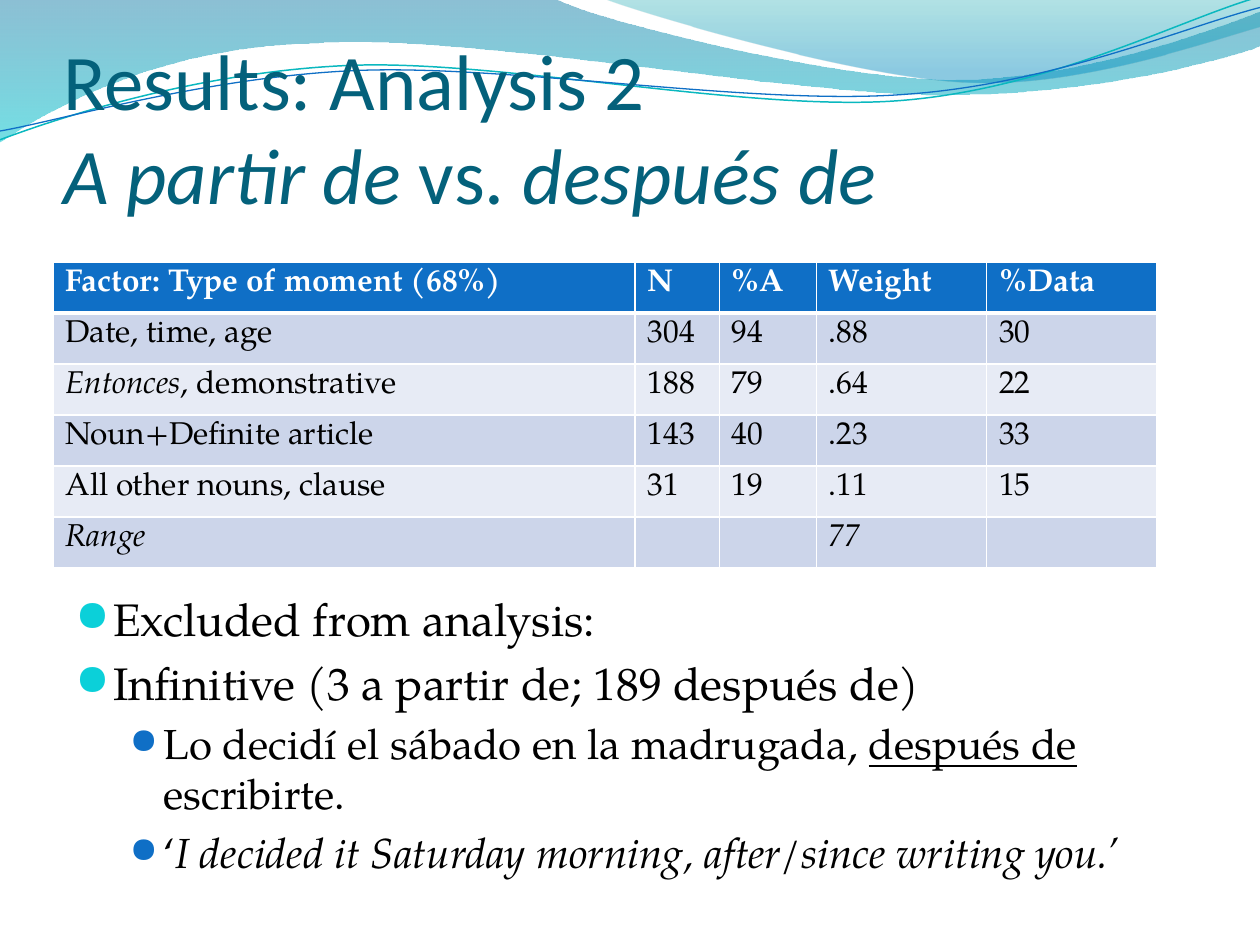
from math import cos, sin, radians
from pptx import Presentation
from pptx.util import Inches, Pt
from pptx.dml.color import RGBColor as RGB
from pptx.enum.text import MSO_ANCHOR as Anchor, MSO_AUTO_SIZE as Auto, PP_ALIGN as Align
from pptx.oxml.ns import qn
from lxml.etree import SubElement as Sub

HUES = {
    "title": "04617B", "text": "000000", "white": "FFFFFF",
    "head": "0F6FC6", "odd": "CCD5EA", "even": "E7EBF5",
    "aqua": "0BD0D9", "teal": "0AB8BF", "blue": "0F6FC6",
}
SERIF = "TeX Gyre Pagella"


def draw(start, parts, close):
    """Outline in inches: a part is a line end (2 numbers) or a cubic curve (6)."""
    dots = [start] + [p[k:k + 2] for p in parts for k in range(0, len(p), 2)]
    spots = [(Inches(x), Inches(y)) for x, y in dots]
    form = slide.shapes.build_freeform(*spots[0])
    form.add_line_segments(spots[1:], close=close)
    shape = form.convert_to_shape()
    shape.shadow.inherit = False
    # Join each run of three points into one curve
    lines = iter(list(shape.element.iter(qn("a:lnTo"))))
    for part in parts:
        first = next(lines)
        if len(part) == 6:
            first.tag = qn("a:cubicBezTo")
            for line in (next(lines), next(lines)):
                first.append(line[0])
                line.getparent().remove(line)
    return shape


def style(run, size, hue, face=SERIF, **flags):
    font = run.font
    font.size, font.name = Pt(size), face
    font.color.rgb = RGB.from_string(HUES[hue])
    for name, value in flags.items():
        setattr(font, name, value)


prs = Presentation()
prs.slide_width, prs.slide_height = Inches(10), Inches(7.5)
slide = prs.slides.add_slide(prs.slide_layouts[5])

# Shaded waves: start, parts, gradient stops (place, colour, opacity in %)
waves = [
    ((0, 0), [(4.4, -0.01), (4.76, 0.17, 6.64, 0.63, 7.58, 0.63),
              (8.53, 0.63, 9.58, 0.26, 10, 0.09), (10.01, 0.36),
              (9.83, 0.44, 8.7, 0.76, 7.46, 0.75),
              (6.22, 0.75, 3.82, 0.28, 2.57, 0.34),
              (1.29, 0.36, 0.46, 0.83, -0.01, 1.13)],
     [(0, "0074A1", 45), (1, "00C6CF", 55)]),
    ((4.79, -0.01), [(5.09, 0.11, 6.82, 0.62, 7.69, 0.65),
                     (8.56, 0.69, 9.61, 0.32, 10, 0.21), (10, 0)],
     [(0, "00A1A9", 30), (0.8, "008BBF", 45)]),
]
for start, parts, stops in waves:
    wave = draw(start, parts, True)
    wave.line.fill.background()
    wave.fill.gradient()
    wave.fill.gradient_angle = 270
    for stop, (place, hue, alpha) in zip(wave.fill.gradient_stops, stops):
        stop.position = place
        stop.color.rgb = RGB.from_string(hue)
    marks = wave.element.spPr.iter(qn("a:srgbClr"))
    for mark, (place, hue, alpha) in zip(marks, stops):
        Sub(mark, qn("a:alpha"), val=str(alpha * 1000))

# Thin wave lines, laid level around their middle and then tilted
TILT = 2.7
threads = [
    ((0, 1.11), [(0.48, 0.93, 1.58, 0.57, 2.77, 0.52),
                 (3.95, 0.47, 5.93, 0.89, 7.13, 0.8),
                 (8.33, 0.71, 9.38, 0.15, 9.98, -0.02)], 0.58, "teal", 0.85),
    ((0, 1.04), [(0.47, 0.96, 1.64, 0.61, 2.83, 0.56),
                 (4.03, 0.51, 5.97, 0.84, 7.17, 0.75),
                 (8.36, 0.67, 9.41, 0.21, 10, 0.06)], 0.59, "blue", 0.75),
]
co, si = cos(radians(TILT)), sin(radians(TILT))
for start, parts, mid, hue, width in threads:
    level = []
    for part in [start] + parts:
        pairs = [(x - 5, y - mid) for x, y in zip(part[::2], part[1::2])]
        level.append(tuple(v for x, y in pairs
                           for v in (5 + x * co - y * si, mid + x * si + y * co)))
    thread = draw(level[0], level[1:], False)
    thread.rotation = 360 - TILT
    thread.fill.background()
    thread.line.color.rgb = RGB.from_string(HUES[hue])
    thread.line.width = Pt(width)

# Title, brought in front of the waves
title = slide.shapes.title
title.element.getparent().append(title.element)
title.left, title.top = Inches(0.5), Inches(0.5)
title.width, title.height = Inches(9), Inches(1.25)
frame = title.text_frame
frame.auto_size, frame.vertical_anchor = Auto.NONE, Anchor.BOTTOM
frame.margin_left = frame.margin_right = frame.margin_bottom = 0
frame.margin_top = Inches(0.05)
frame.text = "Results: Analysis 2\v"
para = frame.paragraphs[0]
para.alignment = Align.LEFT
for text in ("A partir de", " vs. ", "después de"):
    para.add_run().text = text
for run in para.runs:
    style(run, 45, "title", "Calibri", italic=run.text in ("A partir de", "después de"))

# Bulleted notes: level, then pieces of text with their flags
notes = [
    (0, [("Excluded from analysis:", {})]),
    (0, [("Infinitive (3 a partir de; 189 después de)", {})]),
    (1, [("Lo decidí el sábado en la madrugada, ", {}),
         ("después de ", {"underline": True}), ("escribirte.", {})]),
    (1, [("‘", {}),
         ("I decided it Saturday morning, after/since writing you.’", {"italic": True})]),
]
# Size, indent, hanging, bullet colour and bullet size of each level
levels = [(26, 0.3, 0.3, "aqua", 95), (24, 0.7, 0.27, "blue", 85)]
box = slide.shapes.add_textbox(Inches(0.5), Inches(4.69), Inches(9), Inches(2.23))
frame = box.text_frame
frame.word_wrap = True
frame.margin_top = 0
for n, (level, pieces) in enumerate(notes):
    size, indent, hang, hue, scale = levels[level]
    para = frame.add_paragraph() if n else frame.paragraphs[0]
    para.level = level
    para.space_before = Pt(size * 0.2 if n else 0)
    for text, flags in pieces:
        run = para.add_run()
        run.text = text
        style(run, size, "text", **flags)
    props = para._p.get_or_add_pPr()
    props.set("marL", str(Inches(indent)))
    props.set("indent", str(-Inches(hang)))
    Sub(Sub(props, qn("a:buClr")), qn("a:srgbClr"), val=HUES[hue])
    Sub(props, qn("a:buSzPct"), val=str(scale * 1000))
    Sub(props, qn("a:buFont"), typeface="OpenSymbol")
    Sub(props, qn("a:buChar"), char="●")

# Table of factor weights; the listed words are in italics
rows = [
    ["Factor: Type of moment (68%)", "N", "%A", "Weight", "%Data"],
    ["Date, time, age", "304", "94", ".88", "30"],
    ["Entonces|, demonstrative", "188", "79", ".64", "22"],
    ["Noun+Definite article", "143", "40", ".23", "33"],
    ["All other nouns, clause", "31", "19", ".11", "15"],
    ["Range", "", "", "77", ""],
]
slanted = ("Entonces", "Range", "77")
grid = slide.shapes.add_table(len(rows), 5, Inches(0.42), Inches(2.08),
                              Inches(8.75), Inches(2.43)).table
for col, width in zip(grid.columns, (4.62, 0.67, 0.77, 1.35, 1.35)):
    col.width = Inches(width)
for r, row in enumerate(rows):
    band = "head" if r == 0 else "odd" if r % 2 else "even"
    for c, text in enumerate(row):
        cell = grid.cell(r, c)
        if r == 0:
            props = cell._tc.get_or_add_tcPr()
            for side, width in (("L", 1), ("R", 1), ("T", 1), ("B", 3)):
                edge = Sub(props, qn("a:ln" + side), w=str(Pt(width)))
                Sub(Sub(edge, qn("a:solidFill")), qn("a:srgbClr"), val=HUES["white"])
        cell.fill.solid()
        cell.fill.fore_color.rgb = RGB.from_string(HUES[band])
        para = cell.text_frame.paragraphs[0]
        para.font.size = Pt(18)
        for piece in filter(None, text.split("|")):
            run = para.add_run()
            run.text = piece
            style(run, 18, "text" if r else "white", bold=r == 0, italic=piece in slanted)

prs.save("out.pptx")
